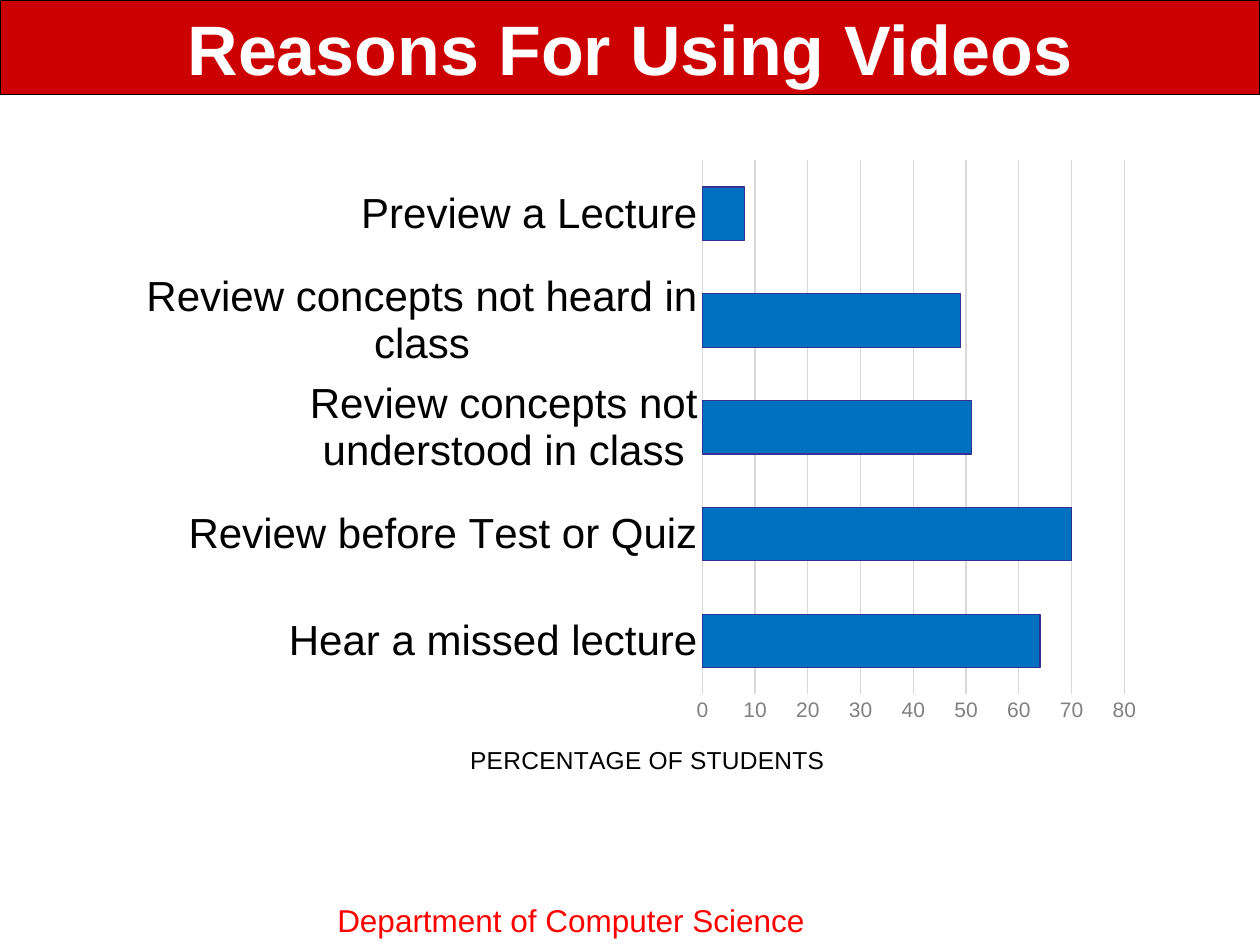
from lxml.etree import SubElement
from pptx import Presentation
from pptx.chart.data import CategoryChartData
from pptx.dml.color import RGBColor
from pptx.enum.chart import XL_CHART_TYPE, XL_TICK_MARK
from pptx.enum.shapes import MSO_SHAPE
from pptx.enum.text import MSO_ANCHOR, PP_ALIGN
from pptx.oxml.ns import qn
from pptx.util import Cm, Pt

TITLE = "Reasons For Using Videos"
FOOTER = "Department of Computer Science"
AXIS_TITLE = "PERCENTAGE OF STUDENTS"
REASONS = [
    ("Hear a missed lecture", 64),
    ("Review before Test or Quiz", 70),
    ("Review concepts not understood in class", 51),
    ("Review concepts not heard in class", 49),
    ("Preview a Lecture", 8),
]
COLORS = {
    "banner": "CC0000", "title": "FFFFFF", "footer": "FF0000", "text": "000000",
    "bar": "0070C0", "bar_edge": "323296", "grid": "D9D9D9", "scale": "808080",
}
FONT = "Arial"
SLIDE_WIDTH, SLIDE_HEIGHT = Cm(25.4), Cm(19.05)
BANNER_HEIGHT = Cm(1.9)
TITLE_MARGIN = Cm(1.27)


def color(name):
    return RGBColor.from_string(COLORS[name])


def style_font(font, size, color_name, bold=False):
    font.name, font.size, font.bold = FONT, Pt(size), bold
    font.color.rgb = color(color_name)


def style_line(line, color_name):
    line.color.rgb = color(color_name)
    line.width = Pt(0.75)


def add_text(slide, text, left, top, width, height, *, size, color_name,
             bold=False, align=PP_ALIGN.LEFT, anchor=MSO_ANCHOR.TOP, wrap=True):
    frame = slide.shapes.add_textbox(left, top, width, height).text_frame
    frame.word_wrap, frame.vertical_anchor = wrap, anchor
    paragraph = frame.paragraphs[0]
    paragraph.text, paragraph.alignment = text, align
    style_font(paragraph.runs[0].font, size, color_name, bold)


def place(layout, **settings):
    """Fill a chart layout element with a manual position in chart fractions."""
    manual = SubElement(layout, qn("c:manualLayout"))
    for tag, value in settings.items():
        SubElement(manual, qn(f"c:{tag}")).set("val", str(value))


def child_layout(parent, position):
    layout = parent.find(qn("c:layout"))
    if layout is None:
        layout = SubElement(parent, qn("c:layout"))
    parent.insert(position, layout)
    return layout


def add_banner(slide):
    banner = slide.shapes.add_shape(MSO_SHAPE.RECTANGLE, 0, 0, SLIDE_WIDTH, BANNER_HEIGHT)
    banner.shadow.inherit = False
    banner.fill.solid()
    banner.fill.fore_color.rgb = color("banner")
    style_line(banner.line, "text")


def add_reasons_chart(slide):
    data = CategoryChartData()
    data.categories = [reason for reason, _ in REASONS]
    data.add_series("Series 1", [percent for _, percent in REASONS])
    chart = slide.shapes.add_chart(XL_CHART_TYPE.BAR_CLUSTERED, Cm(2.54), Cm(2.97),
                                   Cm(20.75), Cm(13.13), data).chart
    chart.has_legend = chart.has_title = False
    style_font(chart.font, 10, "text")

    plot = chart.plots[0]
    plot.gap_width, plot.vary_by_categories = 100, False
    bars = plot.series[0].format
    bars.fill.solid()
    bars.fill.fore_color.rgb = color("bar")
    style_line(bars.line, "bar_edge")

    reasons, scale = chart.category_axis, chart.value_axis
    for axis, size, color_name in ((reasons, 24, "text"), (scale, 12, "scale")):
        axis.major_tick_mark = axis.minor_tick_mark = XL_TICK_MARK.NONE
        style_font(axis.tick_labels.font, size, color_name)
    style_line(reasons.format.line, "grid")
    scale.format.line.fill.background()
    scale.minimum_scale, scale.maximum_scale, scale.major_unit = 0, 80, 10
    scale.has_major_gridlines = True
    style_line(scale.major_gridlines.format.line, "grid")

    caption = scale.axis_title
    caption.text_frame.text = AXIS_TITLE
    style_font(caption.text_frame.paragraphs[0].runs[0].font, 14, "text")

    plot_area = chart.element.find(qn("c:chart")).find(qn("c:plotArea"))
    place(child_layout(plot_area, 0), layoutTarget="inner", xMode="edge", yMode="edge",
          x=0.56, y=0.02, w=0.41, h=0.82)
    title = plot_area.find(qn("c:valAx")).find(qn("c:title"))
    place(child_layout(title, 1), xMode="edge", yMode="edge", x=0.33, y=0.91)


def main():
    presentation = Presentation()
    presentation.slide_width, presentation.slide_height = SLIDE_WIDTH, SLIDE_HEIGHT
    slide = presentation.slides.add_slide(presentation.slide_layouts[6])
    add_banner(slide)
    add_text(slide, FOOTER, Cm(6.55), Cm(18.03), Cm(10.03), Cm(1.02),
             size=18, color_name="footer", wrap=False)
    add_reasons_chart(slide)
    add_text(slide, TITLE, TITLE_MARGIN, 0, SLIDE_WIDTH - 2 * TITLE_MARGIN, BANNER_HEIGHT,
             size=40, color_name="title", bold=True,
             align=PP_ALIGN.CENTER, anchor=MSO_ANCHOR.MIDDLE)
    presentation.save("out.pptx")


if __name__ == "__main__":
    main()
